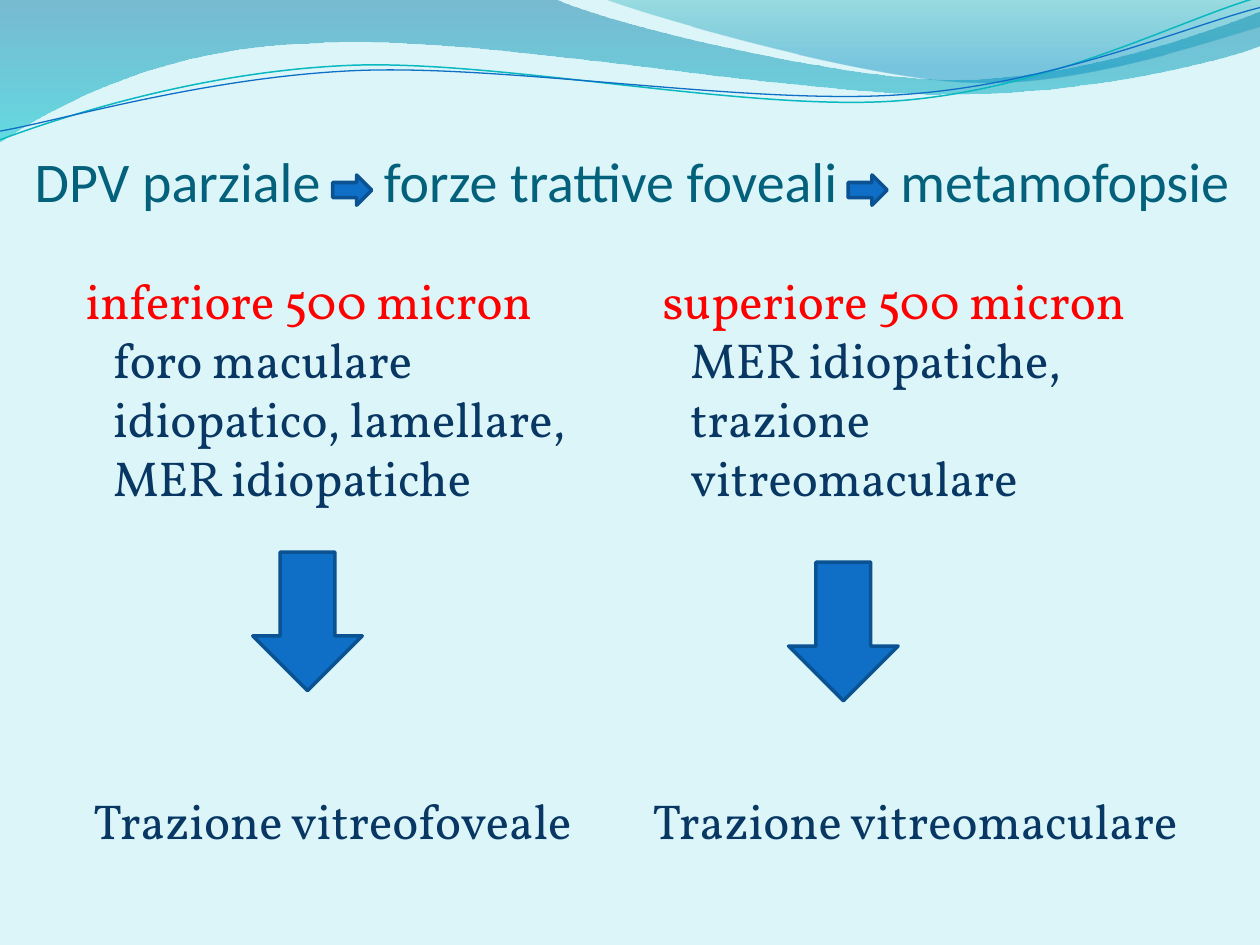
"""Build the slide on partial vitreous detachment and its foveal traction."""
from dataclasses import dataclass

import lxml.etree
import pptx
import pptx.dml.color
import pptx.enum.shapes
import pptx.enum.text
import pptx.oxml.ns
import pptx.util

Pt = pptx.util.Pt
Color = pptx.dml.color.RGBColor.from_string
qn = pptx.oxml.ns.qn
RIGHT_ARROW = pptx.enum.shapes.MSO_SHAPE.RIGHT_ARROW


@dataclass(frozen=True)
class Theme:
    """Colours, fonts and type sizes of the slide."""
    background: str = "DBF5F9"
    title: str = "04617B"
    heading: str = "FF0000"
    body: str = "083763"
    arrow: str = "0F6FC6"
    arrow_edge: str = "0B5292"
    teal: str = "0AB8BF"
    title_font: str = "Calibri"
    body_font: str = "Vollkorn"
    title_size: int = 32
    body_size: int = 28


THEME = Theme()

BROAD_WAVE = [
    (0, 0), (316.8, -0.7),
    (342.7, 12.2, 478.1, 45.4, 545.8, 45.4),
    (614.2, 45.4, 689.8, 18.7, 720, 6.5),
    (720.7, 25.9),
    (707.8, 31.7, 626.4, 54.7, 537.1, 54),
    (447.8, 54, 275, 20.2, 185, 24.5),
    (92.9, 25.9, 33.1, 59.8, -0.7, 81.4),
]
CORNER_WAVE = [
    (344.9, -0.7),
    (366.5, 7.9, 491, 44.6, 553.7, 46.8),
    (616.3, 49.7, 691.9, 23, 720, 15.1),
    (720, 0),
]
TEAL_CURVE = [
    (0, 79.9),
    (34.6, 67, 113.8, 41, 199.4, 37.4),
    (284.4, 33.8, 427, 64.1, 513.4, 57.6),
    (599.8, 51.1, 675.4, 10.8, 718.6, -1.4),
]
BLUE_CURVE = [
    (0, 74.9),
    (33.8, 69.1, 118.1, 43.9, 203.8, 40.3),
    (290.2, 36.7, 430.6, 60.5, 516.2, 54),
    (601.9, 48.2, 677.5, 15.1, 720, 4.3),
]


def apply(target, formats):
    """Set each named attribute on the target."""
    for name, value in formats.items():
        setattr(target, name, value)


def bend(shape, segments):
    """Turn the sides that have control points into cubic curves."""
    sides = list(shape.element.iter(qn("a:lnTo")))
    for side, segment in zip(sides, segments):
        if len(segment) == 2:
            continue
        curve = lxml.etree.Element(qn("a:cubicBezTo"))
        for x, y in zip(segment[::2], segment[1::2]):
            lxml.etree.SubElement(curve, qn("a:pt"), x=str(Pt(x) - shape.left),
                                  y=str(Pt(y) - shape.top))
        side.getparent().replace(side, curve)


def add_outline(page, segments, close):
    """Add a freeform of straight and curved sides without shadow."""
    start, *rest = [(Pt(segment[-2]), Pt(segment[-1])) for segment in segments]
    builder = page.shapes.build_freeform(*start, scale=1.0)
    builder.add_line_segments(rest, close=close)
    shape = builder.convert_to_shape()
    bend(shape, segments[1:])
    shape.shadow.inherit = False
    return shape


def add_wave(page, segments, stops):
    """Add a wave filled with a translucent downward gradient."""
    shape = add_outline(page, segments, True)
    shape.line.fill.background()
    shape.fill.gradient()
    shape.fill.gradient_angle = 270
    for stop, (position, color, _) in zip(shape.fill.gradient_stops, stops):
        stop.position = position
        stop.color.rgb = Color(color)
    for element, (_, _, opacity) in zip(shape.element.iter(qn("a:srgbClr")), stops):
        lxml.etree.SubElement(element, qn("a:alpha"), val=str(opacity * 1000))


def add_curve(page, segments, color, width):
    """Add an open curved line."""
    shape = add_outline(page, segments, False)
    shape.fill.background()
    shape.line.color.rgb = Color(color)
    shape.line.width = Pt(width)


def add_arrow(page, left, top, width, height, rotation=0):
    """Add a block arrow."""
    shape = page.shapes.add_shape(RIGHT_ARROW, Pt(left), Pt(top), Pt(width), Pt(height))
    shape.shadow.inherit = False
    shape.fill.solid()
    shape.fill.fore_color.rgb = Color(THEME.arrow)
    shape.line.color.rgb = Color(THEME.arrow_edge)
    apply(shape, {"rotation": rotation})
    apply(shape.line, {"width": Pt(2)})


def add_box(page, left, top, width, height, formats):
    """Add a wrapping text box and return its frame."""
    frame = page.shapes.add_textbox(Pt(left), Pt(top), Pt(width), Pt(height)).text_frame
    apply(frame, {"word_wrap": True, **formats})
    return frame


def add_span(para, text, font, size, color):
    """Add one run of styled text."""
    span = para.add_run()
    span.text = text
    apply(span.font, {"name": font, "size": Pt(size)})
    span.font.color.rgb = Color(color)


def add_title(page, parts, stops):
    """Add the title with its parts set at tab stops."""
    frame = add_box(page, 19.8, 60.1, 700.2, 61.9, {
        "vertical_anchor": pptx.enum.text.MSO_ANCHOR.BOTTOM,
        "margin_left": 0, "margin_right": 0, "margin_top": Pt(3.6), "margin_bottom": 0})
    para = frame.paragraphs[0]
    tabs = lxml.etree.SubElement(para._p.get_or_add_pPr(), qn("a:tabLst"))
    for stop in stops:
        lxml.etree.SubElement(tabs, qn("a:tab"), pos=str(Pt(stop)), algn="l")
    add_span(para, "\t".join(parts), THEME.title_font, THEME.title_size, THEME.title)


def add_column(page, left, heading, detail, conclusion, conclusion_shift, broken=False):
    """Add a column with a heading, its detail and a conclusion."""
    frame = add_box(page, left, 151.2, 318.2, 349.2, {})
    paras = [frame.paragraphs[0], frame.add_paragraph()]
    for para, shift in zip(paras, (5.8, conclusion_shift)):
        properties = para._p.get_or_add_pPr()
        properties.set("marL", str(Pt(21.6)))
        properties.set("indent", str(Pt(shift - 21.6)))
    font = (THEME.body_font, THEME.body_size)
    add_span(paras[0], heading + " ", *font, THEME.heading)
    if broken:
        paras[0].add_line_break()
    add_span(paras[0], detail, *font, THEME.body)
    paras[1].space_before = Pt(162.3)
    add_span(paras[1], conclusion, *font, THEME.body)


def main():
    """Build and save the deck."""
    deck = pptx.Presentation()
    apply(deck, {"slide_width": Pt(720), "slide_height": Pt(540)})
    page = deck.slides.add_slide(deck.slide_layouts[6])
    page.background.fill.solid()
    page.background.fill.fore_color.rgb = Color(THEME.background)
    add_wave(page, BROAD_WAVE, [(0, "0074A1", 45), (1, "00C6CF", 55)])
    add_wave(page, CORNER_WAVE, [(0, "00A1A9", 30), (0.8, "008BBF", 45)])
    add_curve(page, TEAL_CURVE, THEME.teal, 0.85)
    add_curve(page, BLUE_CURVE, THEME.arrow, 0.75)
    add_title(page, ["DPV parziale", "forze trattive foveali", "metamofopsie"], [199.5, 494.7])
    add_column(page, 36, "inferiore 500 micron",
               "foro maculare idiopatico, lamellare, MER idiopatiche",
               "Trazione vitreofoveale", 10.3, broken=True)
    add_column(page, 365.8, "superiore 500 micron",
               "MER idiopatiche, trazione vitreomaculare",
               "Trazione vitreomaculare", 0)
    for left in (190.1, 484.6):
        add_arrow(page, left, 100, 22.3, 17.3)
    for left, top in ((136.1, 323.8), (442.3, 329.6)):
        add_arrow(page, left, top, 79.2, 62.6, 90)
    deck.save("out.pptx")


if __name__ == "__main__":
    main()
